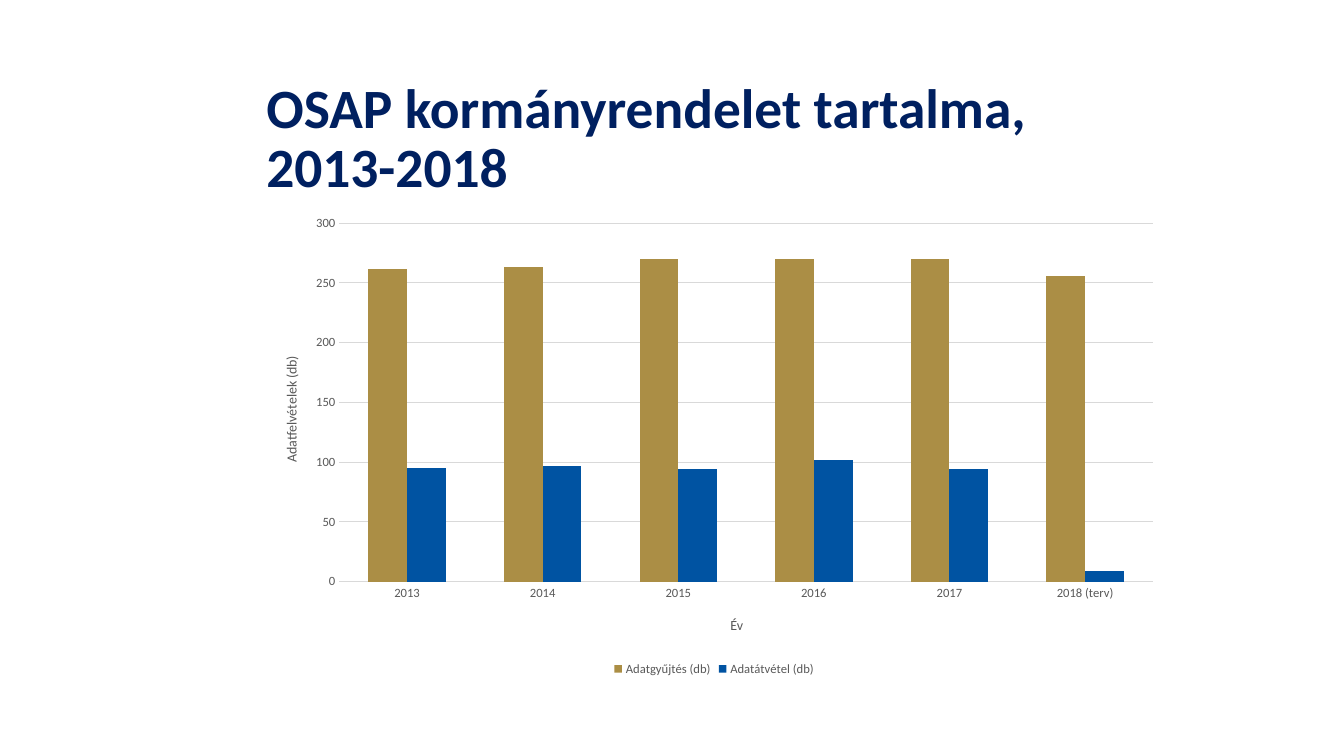
from dataclasses import dataclass

from lxml.etree import SubElement
from pptx import Presentation
from pptx.chart.data import CategoryChartData
from pptx.dml.color import RGBColor
from pptx.enum.chart import XL_CHART_TYPE, XL_LEGEND_POSITION, XL_TICK_MARK
from pptx.enum.text import MSO_ANCHOR, MSO_AUTO_SIZE, PP_ALIGN
from pptx.oxml.ns import qn
from pptx.util import Pt

FONT = "Calibri"
COLORS = {"navy": "002060", "gold": "AB8E45", "blue": "0053A2",
          "gray": "595959", "grid": "D9D9D9"}
YEARS = ["2013", "2014", "2015", "2016", "2017", "2018 (terv)"]


@dataclass
class Series:
    name: str
    values: list[int]
    color: str


SERIES = [
    Series("Adatgyűjtés (db)", [262, 263, 270, 270, 270, 256], "gold"),
    Series("Adatátvétel (db)", [95, 97, 94, 102, 94, 9], "blue"),
]


def color(name: str) -> RGBColor:
    return RGBColor.from_string(COLORS[name])


def style(font, size: float, name: str, bold: bool = False) -> None:
    font.name, font.size, font.bold = FONT, Pt(size), bold
    font.color.rgb = color(name)


def place(node, index: int, **parts) -> None:
    """Set a manual layout, in fractions of the chart."""
    for old in node.findall(qn("c:layout")):
        node.remove(old)
    layout = SubElement(node, qn("c:layout"))
    node.insert(index, layout)
    manual = SubElement(layout, qn("c:manualLayout"))
    for tag, value in parts.items():
        SubElement(manual, qn(f"c:{tag}")).set("val", str(value))


def format_axis(axis, title: str, left: float, top: float) -> None:
    axis.major_tick_mark = axis.minor_tick_mark = XL_TICK_MARK.NONE
    axis.format.line.fill.background()
    style(axis.tick_labels.font, 9, "gray")
    frame = axis.axis_title.text_frame
    frame.text = title
    style(frame.paragraphs[0].runs[0].font, 10, "gray")
    place(axis.axis_title._element, 1,
          xMode="edge", yMode="edge", x=left, y=top)


def add_title(slide) -> None:
    title = slide.shapes.title
    title.left, title.top = Pt(183), Pt(67)
    title.width, title.height = Pt(653), Pt(66)
    frame = title.text_frame
    frame.text = "OSAP kormányrendelet tartalma, 2013-2018"
    frame.word_wrap = True
    frame.auto_size = MSO_AUTO_SIZE.NONE
    frame.vertical_anchor = MSO_ANCHOR.MIDDLE
    line = frame.paragraphs[0]
    line.alignment, line.line_spacing = PP_ALIGN.LEFT, 0.9
    style(line.runs[0].font, 39.6, "navy", True)


def add_bars(slide) -> None:
    data = CategoryChartData()
    data.categories = YEARS
    for item in SERIES:
        data.add_series(item.name, item.values)
    chart = slide.shapes.add_chart(
        XL_CHART_TYPE.COLUMN_CLUSTERED, Pt(183.6), Pt(147.6),
        Pt(653), Pt(338.4), data).chart
    chart.has_title = False
    chart.font.name, chart.font.size = FONT, Pt(10)

    # Columns
    plot = chart.plots[0]
    plot.gap_width, plot.overlap, plot.vary_by_categories = 150, 0, False
    for bars, item in zip(plot.series, SERIES):
        bars.format.fill.solid()
        bars.format.fill.fore_color.rgb = color(item.color)
    place(chart._chartSpace.chart.plotArea, 0, layoutTarget="inner",
          xMode="edge", yMode="edge", x=0.09, y=0.035, w=0.89, h=0.757)

    # Axes and grid
    format_axis(chart.category_axis, "Év", 0.515, 0.86)
    axis = chart.value_axis
    format_axis(axis, "Adatfelvételek (db)", 0.025, 0.31)
    axis.minimum_scale, axis.maximum_scale, axis.major_unit = 0, 300, 50
    grid = axis.major_gridlines.format.line
    grid.width, grid.color.rgb = Pt(0.75), color("grid")

    # Legend
    chart.has_legend = True
    chart.legend.position = XL_LEGEND_POSITION.BOTTOM
    chart.legend.include_in_layout = False
    style(chart.legend.font, 9, "gray")


def main() -> None:
    deck = Presentation()
    deck.slide_width, deck.slide_height = Pt(960), Pt(540)
    slide = deck.slides.add_slide(deck.slide_layouts[5])
    add_title(slide)
    add_bars(slide)
    deck.save("out.pptx")


if __name__ == "__main__":
    main()
